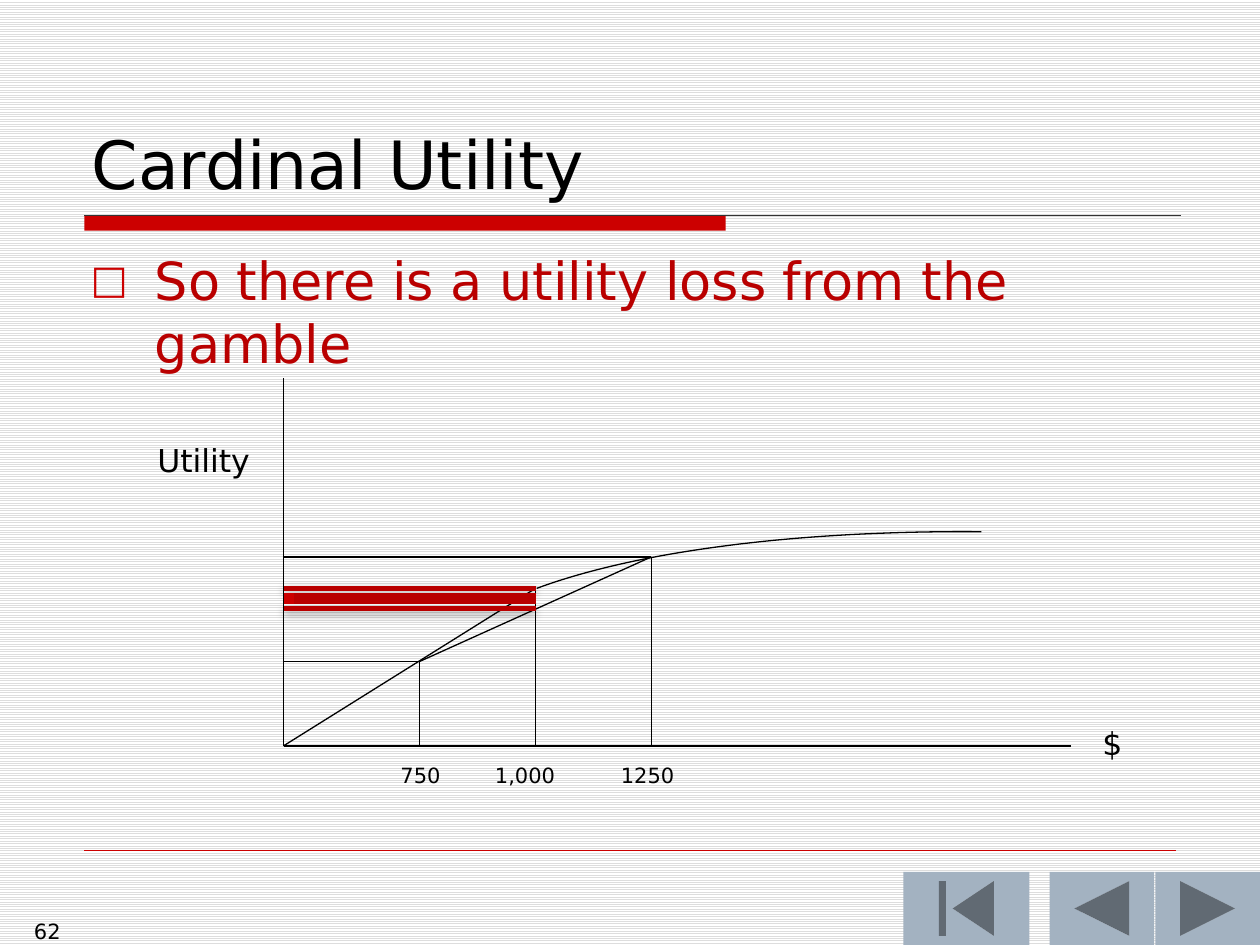
import pptx
import pptx.dml.color
import pptx.enum.dml
import pptx.enum.shapes
import pptx.enum.text
import pptx.oxml
import pptx.oxml.ns
import pptx.util
from pptx.util import Inches

BLACK, RED, DEEP_RED = "000000", "CC0000", "B90000"
STEEL, STRIPE, WHITE, RULE = "A3B2C1", "DDDDDD", "FFFFFF", "333333"
NS = pptx.oxml.ns.nsdecls("a")
SHADOW = (f'<a:effectLst {NS}><a:outerShdw blurRad="63500" dist="22860" '
          'dir="5400000" rotWithShape="0"><a:srgbClr val="000000">'
          '<a:alpha val="35000"/></a:srgbClr></a:outerShdw></a:effectLst>')
NO_EFFECT = f"<a:effectLst {NS}/>"


def rgb(hex_text):
    return pptx.dml.color.RGBColor.from_string(hex_text)


class SlideBuilder:
    font = "DejaVu Sans"

    def __init__(self, slide):
        self.slide = slide
        self.shapes = slide.shapes

    def background(self, fore, back):
        fill = self.slide.background.fill
        fill.patterned()
        fill.pattern = pptx.enum.dml.MSO_PATTERN.LIGHT_HORIZONTAL
        fill.fore_color.rgb = rgb(fore)
        fill.back_color.rgb = rgb(back)

    def text(self, box, wording, size, color=BLACK, wrap=True, grow=False,
             anchor="TOP", align="LEFT"):
        frame = self.shapes.add_textbox(*map(Inches, box)).text_frame
        frame.text = wording
        frame.word_wrap = wrap
        frame.vertical_anchor = getattr(pptx.enum.text.MSO_ANCHOR, anchor)
        if grow:
            frame.auto_size = pptx.enum.text.MSO_AUTO_SIZE.SHAPE_TO_FIT_TEXT
        paragraph = frame.paragraphs[0]
        paragraph.alignment = getattr(pptx.enum.text.PP_ALIGN, align)
        font = paragraph.runs[0].font
        font.name, font.size = self.font, pptx.util.Pt(size)
        font.color.rgb = rgb(color)
        return paragraph

    def bullet(self, paragraph, mark, color, indent):
        props = paragraph._p.get_or_add_pPr()
        props.set("marL", str(Inches(indent)))
        props.set("indent", str(-Inches(indent)))
        for xml in (
            f'<a:spcBef {NS}><a:spcPct val="20000"/></a:spcBef>',
            f'<a:buClr {NS}><a:srgbClr val="{color}"/></a:buClr>',
            f'<a:buSzPct {NS} val="75000"/>',
            f'<a:buFont {NS} typeface="{self.font}"/>',
            f'<a:buChar {NS} char="{mark}"/>',
        ):
            props.append(pptx.oxml.parse_xml(xml))

    def line(self, start, end, color=BLACK, width=0.75, shadow=False):
        connector = self.shapes.add_connector(
            pptx.enum.shapes.MSO_CONNECTOR.STRAIGHT, *map(Inches, start + end))
        connector.line.color.rgb = rgb(color)
        connector.line.width = pptx.util.Pt(width)
        connector._element.spPr.append(
            pptx.oxml.parse_xml(SHADOW if shadow else NO_EFFECT))

    def block(self, kind, box, color):
        shape = self.shapes.add_shape(
            getattr(pptx.enum.shapes.MSO_SHAPE, kind), *map(Inches, box))
        shape.shadow.inherit = False
        shape.fill.solid()
        shape.fill.fore_color.rgb = rgb(color)
        shape.line.fill.background()

    def curve(self, p0, p1, p2, p3, color=BLACK, width=0.75, steps=40):
        points = []
        for step in range(steps + 1):
            t = step / steps
            weights = ((1 - t) ** 3, 3 * t * (1 - t) ** 2,
                       3 * t ** 2 * (1 - t), t ** 3)
            points.append(tuple(
                Inches(sum(w * p[axis]
                           for w, p in zip(weights, (p0, p1, p2, p3))))
                for axis in (0, 1)))
        outline = self.shapes.build_freeform(*points[0])
        outline.add_line_segments(points[1:], close=False)
        shape = outline.convert_to_shape()
        shape.shadow.inherit = False
        shape.fill.background()
        shape.line.color.rgb = rgb(color)
        shape.line.width = pptx.util.Pt(width)


def main():
    deck = pptx.Presentation()
    deck.slide_width, deck.slide_height = Inches(10), Inches(7.5)
    page = SlideBuilder(deck.slides.add_slide(deck.slide_layouts[6]))

    # Background, rules and navigation buttons
    page.background(STRIPE, WHITE)
    page.block("RECTANGLE", (0.67, 1.71, 5.09, 0.12), RED)
    page.line((0.67, 1.71), (9.37, 1.71), RULE)
    page.line((0.67, 6.75), (9.33, 6.75), RED, 0.25)
    for action, left, width in (("BACK_OR_PREVIOUS", 8.33, 0.83),
                                ("BEGINNING", 7.17, 1),
                                ("FORWARD_OR_NEXT", 9.17, 0.83)):
        page.block(f"ACTION_BUTTON_{action}", (left, 6.92, width, 0.58), STEEL)

    # Page number, title and statement
    page.text((0, 7.24, 0.58, 0.26), "62", 12, align="RIGHT")
    page.text((0.63, 0.33, 8.75, 1.33), "Cardinal Utility", 38, anchor="BOTTOM")
    statement = page.text((0.62, 1.92, 8.75, 4.67),
                          "So there is a utility loss from the gamble",
                          30, DEEP_RED)
    page.bullet(statement, "□", RED, 0.51)

    # Axes
    axis_x, axis_y = 2.25, 5.92
    page.line((axis_x, 3), (axis_x, axis_y))
    page.line((axis_x, axis_y), (8.5, axis_y))
    page.text((1.15, 3.45, 0.94, 0.4), "Utility", 18, wrap=False, grow=True)
    page.text((8.65, 5.7, 0.36, 0.4), "$", 18, wrap=False, grow=True)

    # Utility curve: straight start, then flattening
    low, middle, high = (3.33, 5.25), (4.25, 4.67), (5.17, 4.42)
    page.line((axis_x, axis_y), middle)
    page.curve((7.79, 4.22), (6.34, 4.21), (5.07, 4.37), (4.26, 4.67))

    # Outcomes: drop lines, amounts and utility levels
    for outcome in (low, middle, high):
        page.line(outcome, (outcome[0], axis_y))
    for amount, left, width in (("750", 3.08, 0.69), ("1,000", 3.83, 0.69),
                                ("1250", 4.83, 0.63)):
        page.text((left, 6, width, 0.3), amount, 12,
                  wrap=amount == "750", grow=True)
    for outcome in (low, high):
        page.line(outcome, (axis_x, outcome[1]))

    # Gamble chord and utility loss band
    page.line(middle, (axis_x, middle[1]), DEEP_RED, 3, shadow=True)
    page.line(low, high)
    page.line((middle[0], 4.83), (axis_x, 4.83), DEEP_RED, 3, shadow=True)
    for left, color in ((axis_x, RED), (2.33, DEEP_RED)):
        page.line((left, 4.75), (middle[0], 4.75), color, 6)

    deck.save("out.pptx")


if __name__ == "__main__":
    main()
